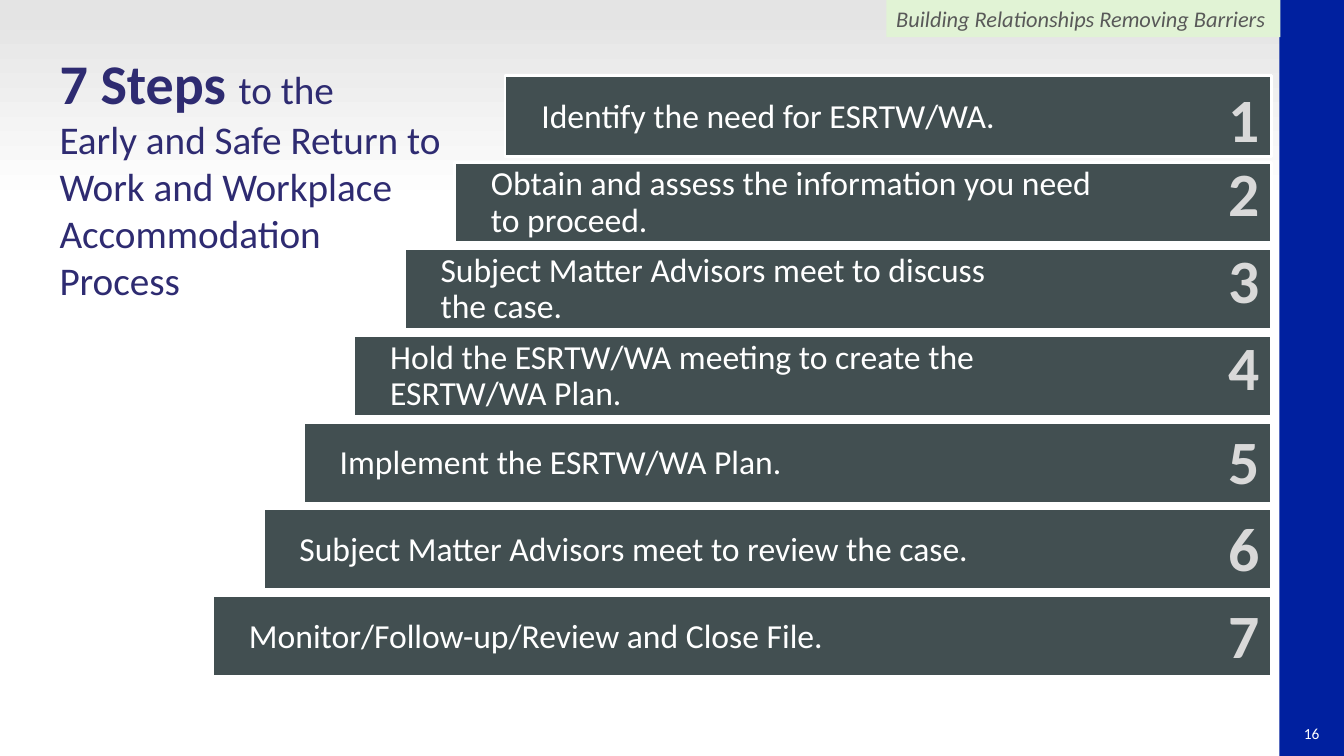
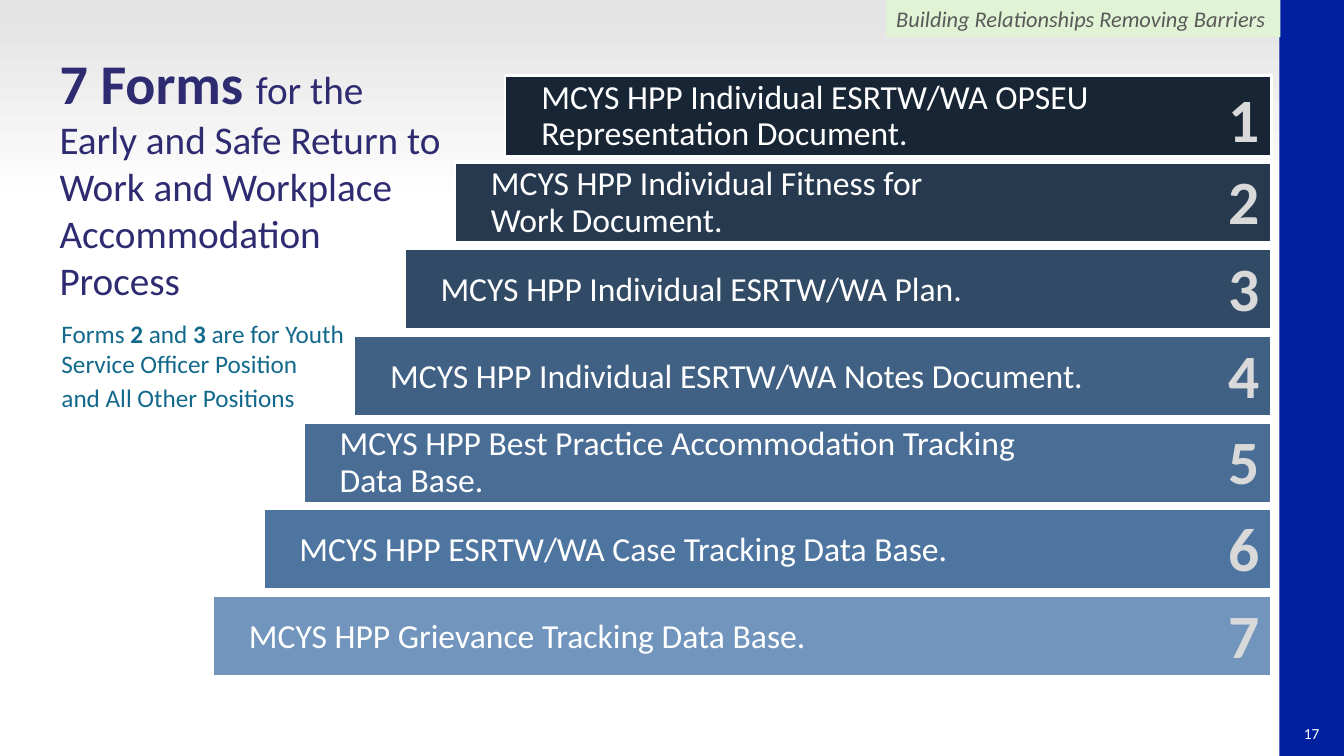
from pptx import Presentation
from pptx.dml.color import RGBColor
from pptx.enum.shapes import MSO_SHAPE
from pptx.enum.text import MSO_ANCHOR, MSO_AUTO_SIZE, PP_ALIGN
from pptx.util import Inches, Pt

RECTANGLE = MSO_SHAPE.RECTANGLE
TOP, MIDDLE = MSO_ANCHOR.TOP, MSO_ANCHOR.MIDDLE
LEFT, CENTER = PP_ALIGN.LEFT, PP_ALIGN.CENTER
NO_AUTOFIT = MSO_AUTO_SIZE.NONE

FONT = "Calibri"
WHITE, GREY = "FFFFFF", "E4E4E4"
NAVY, PALE_GREEN, TAG_TEXT = "00209F", "E1F3D5", "595959"
INDIGO, TEAL, SLATE, SILVER = "2E2B71", "12698B", "424F51", "D9D9D9"

BAR_LEFTS = [5.01, 4.51, 4.01, 3.51, 3.01, 2.61, 2.11]
BAR_RIGHT, BAR_TOP, BAR_HEIGHT, BAR_PITCH = 12.61, 0.75, 0.8, 0.86
PROCESS = "Early and Safe Return to Work and Workplace Accommodation Process"

STEPS = [
    "Identify the need for ESRTW/WA.",
    "Obtain and assess the information you need\nto proceed.",
    "Subject Matter Advisors meet to discuss\nthe case.",
    "Hold the ESRTW/WA meeting to create the\nESRTW/WA Plan.",
    "Implement the ESRTW/WA Plan.",
    "Subject Matter Advisors meet to review the case.",
    "Monitor/Follow-up/Review and Close File.",
]
FORMS = [
    "MCYS HPP Individual ESRTW/WA OPSEU Representation Document.",
    "MCYS HPP Individual Fitness for\nWork Document.",
    "MCYS HPP Individual ESRTW/WA Plan.",
    "MCYS HPP Individual ESRTW/WA Notes Document.",
    "MCYS HPP Best Practice Accommodation Tracking\nData Base.",
    "MCYS HPP ESRTW/WA Case Tracking Data Base.",
    "MCYS HPP Grievance Tracking Data Base.",
]
FORM_COLORS = ["182534", "26394E", "314A65", "406084", "496D95", "4E75A0", "7195BD"]


def color(value):
    return RGBColor.from_string(value)


def format_run(run, size, fill, bold=False, italic=False):
    font = run.font
    font.name, font.size = FONT, Pt(size)
    font.bold, font.italic = bold, italic
    font.color.rgb = color(fill)


def write(paragraph, text, align=LEFT, spacing=None, **style):
    paragraph.text = text
    paragraph.alignment = align
    paragraph.line_spacing = spacing
    for run in paragraph.runs:
        format_run(run, **style)


def write_runs(paragraph, pieces):
    paragraph.alignment = LEFT
    for text, style in pieces:
        run = paragraph.add_run()
        run.text = text
        format_run(run, **style)


def set_frame(frame, insets=(0.1, 0.05, 0.1, 0.05), anchor=TOP, wrap=True):
    frame.auto_size = NO_AUTOFIT
    frame.word_wrap = wrap
    frame.vertical_anchor = anchor
    left, top, right, bottom = map(Inches, insets)
    frame.margin_left, frame.margin_top = left, top
    frame.margin_right, frame.margin_bottom = right, bottom


class Deck:
    def __init__(self):
        self.presentation = Presentation()
        self.presentation.slide_width = Inches(13.33)
        self.presentation.slide_height = Inches(7.5)
        self.slide = None

    def add_slide(self, number):
        layout = self.presentation.slide_layouts.get_by_name("Title Only")
        self.slide = self.presentation.slides.add_slide(layout)
        fill = self.slide.background.fill
        fill.gradient()
        fill.gradient_angle = 90
        for stop, position, shade in zip(fill.gradient_stops, (0.73, 0.98), (WHITE, GREY)):
            stop.position = position
            stop.color.rgb = color(shade)
        self.rectangle(12.69, 0, 0.64, 7.5, NAVY)
        tag = self.rectangle(8.79, 0, 3.91, 0.37, PALE_GREEN)
        set_frame(tag.text_frame, wrap=False)
        write(tag.text_frame.paragraphs[0], "Building Relationships Removing Barriers",
              size=16, fill=TAG_TEXT, italic=True)
        frame = self.text_box(12.78, 7.15, 0.46, 0.25, insets=(0, 0, 0, 0), anchor=MIDDLE)
        write(frame.paragraphs[0], str(number), align=CENTER, size=11, fill=WHITE)

    def rectangle(self, left, top, width, height, fill, outline=None):
        shape = self.slide.shapes.add_shape(
            RECTANGLE, Inches(left), Inches(top), Inches(width), Inches(height))
        shape.shadow.inherit = False
        shape.fill.solid()
        shape.fill.fore_color.rgb = color(fill)
        if outline:
            shape.line.color.rgb = color(outline)
            shape.line.width = Pt(2)
        else:
            shape.line.fill.background()
        return shape

    def text_box(self, left, top, width, height, **layout):
        shape = self.slide.shapes.add_textbox(
            Inches(left), Inches(top), Inches(width), Inches(height))
        set_frame(shape.text_frame, **layout)
        return shape.text_frame

    def title(self, lead, link):
        shape = self.slide.shapes.title
        shape.left, shape.top = Inches(0.49), Inches(0.43)
        shape.width, shape.height = Inches(4.02), Inches(2.66)
        frame = shape.text_frame
        set_frame(frame)
        regular = dict(size=28, fill=INDIGO)
        write_runs(frame.paragraphs[0], [
            (lead + " ", dict(size=40, fill=INDIGO, bold=True)), (link, regular)])
        write(frame.add_paragraph(), PROCESS, **regular)

    def staircase(self, labels, fills, raised=()):
        for index, (label, left, fill) in enumerate(zip(labels, BAR_LEFTS, fills)):
            top = BAR_TOP + BAR_PITCH * index
            bar = self.rectangle(left, top, BAR_RIGHT - left, BAR_HEIGHT, fill, WHITE)
            set_frame(bar.text_frame, (0.36, 0.06, 0.06, 0.06), MIDDLE)
            spacing = Pt(26 if "\n" in label or len(label) > 50 else 27)
            write(bar.text_frame.paragraphs[0], label, spacing=spacing, size=24, fill=WHITE)
            number = index + 1
            lift = 0.12 if number in raised else 0.04 if index else 0
            frame = self.text_box(12.09, top - lift, 0.51, 0.84, wrap=False)
            write(frame.paragraphs[0], str(number), size=44, fill=SILVER, bold=True)

    def note(self):
        frame = self.text_box(0.61, 3.16, 3.3, 1.11, insets=(0, 0, 0, 0))
        regular = dict(size=18, fill=TEAL)
        strong = dict(regular, bold=True)
        write_runs(frame.paragraphs[0], [
            ("Forms ", regular), ("2", strong), (" and ", regular), ("3", strong),
            (" are for Youth Service Officer Position", regular)])
        write(frame.add_paragraph(), "and All Other Positions", spacing=1.1, **regular)


def main():
    deck = Deck()
    deck.add_slide(16)
    deck.staircase(STEPS, [SLATE] * len(STEPS), raised=(2, 3, 4))
    deck.title("7 Steps", "to the")
    deck.add_slide(17)
    deck.staircase(FORMS, FORM_COLORS)
    deck.note()
    deck.title("7 Forms", "for the")
    deck.presentation.save("out.pptx")


if __name__ == "__main__":
    main()
